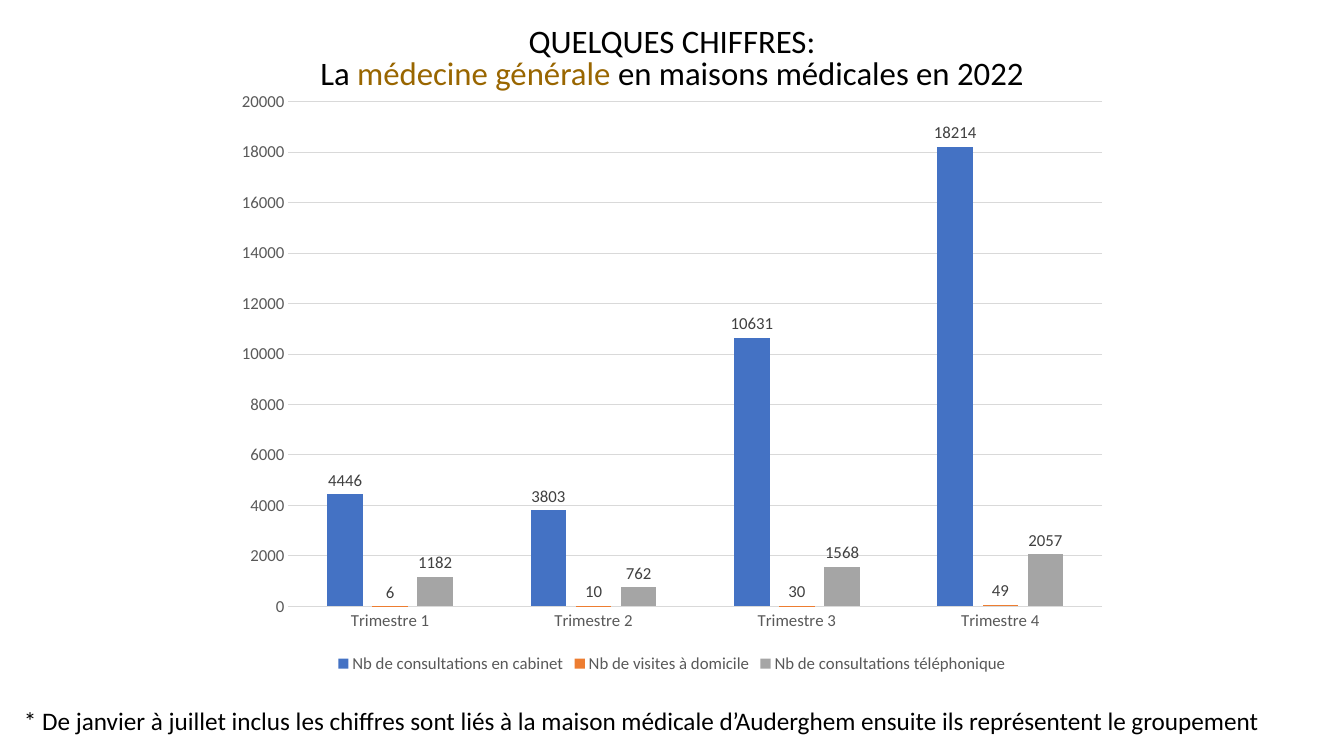
from pptx import Presentation
from pptx.chart.data import CategoryChartData
from pptx.dml.color import RGBColor
from pptx.enum.chart import XL_CHART_TYPE, XL_LABEL_POSITION, XL_LEGEND_POSITION, XL_TICK_MARK
from pptx.enum.text import MSO_ANCHOR, PP_ALIGN
from pptx.util import Pt

FONT = "Calibri"
BLACK = RGBColor(0x00, 0x00, 0x00)
OCHRE = RGBColor(0x99, 0x66, 0x00)
BLUE = RGBColor(0x44, 0x72, 0xC4)
ORANGE = RGBColor(0xED, 0x7D, 0x31)
GRAY = RGBColor(0xA5, 0xA5, 0xA5)
AXIS_TEXT = RGBColor(0x59, 0x59, 0x59)
LABEL_TEXT = RGBColor(0x40, 0x40, 0x40)
GRID = RGBColor(0xD9, 0xD9, 0xD9)

TITLE_LINES = [
    [("QUELQUES CHIFFRES:", BLACK)],
    [("La ", BLACK), ("médecine générale", OCHRE), (" en maisons médicales en 2022", BLACK)],
]
QUARTERS = [f"Trimestre {number}" for number in range(1, 5)]
SERIES = [
    ("Nb de consultations en cabinet", [4446, 3803, 10631, 18214], BLUE),
    ("Nb de visites à domicile", [6, 10, 30, 49], ORANGE),
    ("Nb de consultations téléphonique", [1182, 762, 1568, 2057], GRAY),
]


def set_font(font, size, color):
    font.name = FONT
    font.size = Pt(size)
    font.bold = False
    font.color.rgb = color


deck = Presentation()
deck.slide_width, deck.slide_height = Pt(960), Pt(540)
page = deck.slides.add_slide(deck.slide_layouts[5])

# Chart
data = CategoryChartData()
data.categories = QUARTERS
for name, values, color in SERIES:
    data.add_series(name, values)
chart = page.shapes.add_chart(
    XL_CHART_TYPE.COLUMN_CLUSTERED, Pt(160), Pt(57), Pt(640), Pt(427), data
).chart
set_font(chart.font, 10, BLACK)
chart.has_title = False
chart.has_legend = True
chart.legend.position = XL_LEGEND_POSITION.BOTTOM
chart.legend.include_in_layout = False
set_font(chart.legend.font, 12, AXIS_TEXT)

for axis in (chart.category_axis, chart.value_axis):
    axis.major_tick_mark = axis.minor_tick_mark = XL_TICK_MARK.NONE
    set_font(axis.tick_labels.font, 12, AXIS_TEXT)
chart.value_axis.minimum_scale = 0
chart.value_axis.maximum_scale = 20000
chart.value_axis.major_unit = 2000
chart.value_axis.format.line.fill.background()
for line in (chart.category_axis.format.line, chart.value_axis.major_gridlines.format.line):
    line.color.rgb = GRID
    line.width = Pt(0.75)

plot = chart.plots[0]
plot.gap_width = 219
plot.overlap = -27
plot.vary_by_categories = False
for series, (name, values, color) in zip(plot.series, SERIES):
    series.format.fill.solid()
    series.format.fill.fore_color.rgb = color
    series.invert_if_negative = False
    labels = series.data_labels
    labels.show_value = True
    labels.position = XL_LABEL_POSITION.OUTSIDE_END
    set_font(labels.font, 12, LABEL_TEXT)

# Title
title = page.shapes.title
title.left, title.top, title.width, title.height = Pt(0), Pt(15), Pt(960), Pt(56)
frame = title.text_frame
frame.vertical_anchor = MSO_ANCHOR.MIDDLE
for index, spans in enumerate(TITLE_LINES):
    para = frame.add_paragraph() if index else frame.paragraphs[0]
    para.alignment = PP_ALIGN.CENTER
    para.line_spacing = 0.8
    for text, color in spans:
        span = para.add_run()
        span.text = text
        set_font(span.font, 23.4, color)

# Footnote
note = page.shapes.add_textbox(Pt(10), Pt(500.5), Pt(933), Pt(29)).text_frame
note.word_wrap = True
para = note.paragraphs[0]
para.text = (
    "* De janvier à juillet inclus les chiffres sont liés à la maison médicale "
    "d’Auderghem ensuite ils représentent le groupement"
)
set_font(para.font, 18, BLACK)

deck.save("out.pptx")
